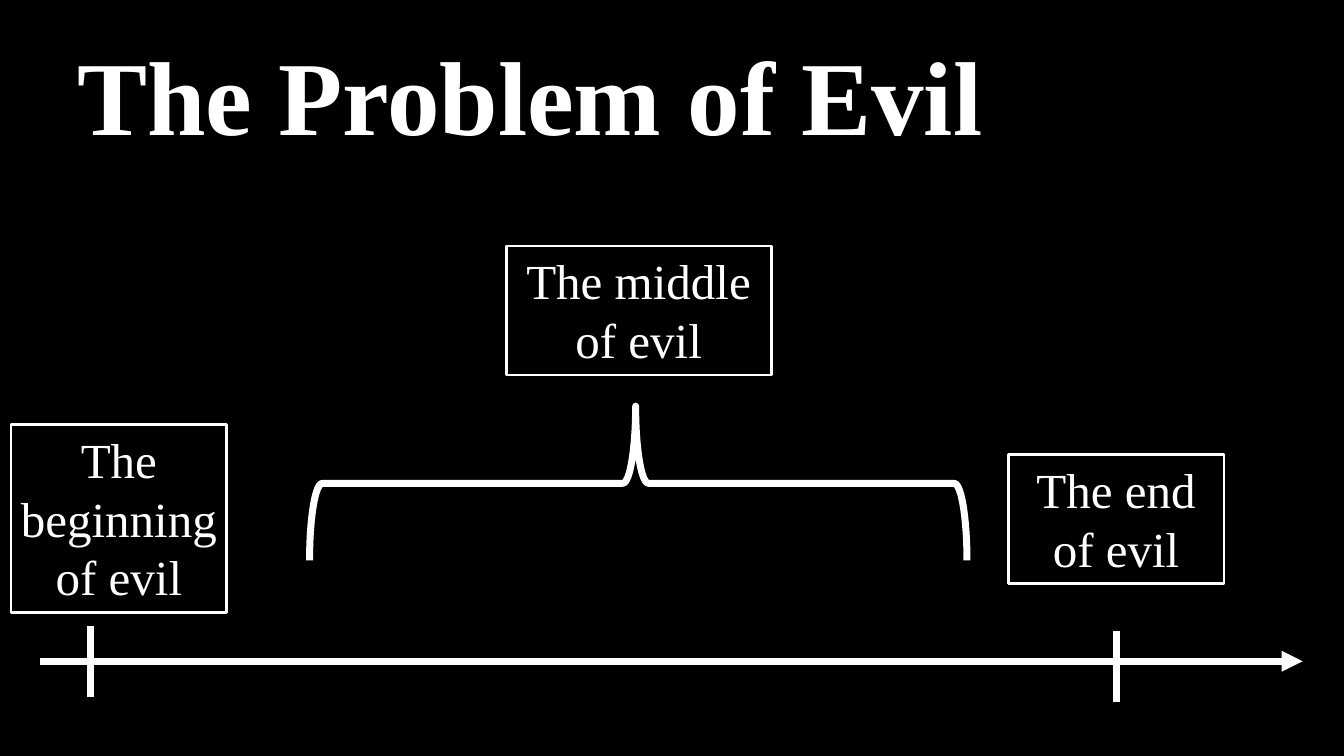
from dataclasses import dataclass

from lxml import etree
from pptx import Presentation
from pptx.dml.color import RGBColor
from pptx.enum.shapes import MSO_CONNECTOR as CONN, MSO_SHAPE as SHAPE
from pptx.enum.text import MSO_ANCHOR as ANCHOR, PP_ALIGN as ALIGN
from pptx.oxml.ns import qn
from pptx.util import Inches, Pt


@dataclass(frozen=True)
class Theme:
    ink: RGBColor = RGBColor(0xFF, 0xFF, 0xFF)
    ground: RGBColor = RGBColor(0, 0, 0)
    font: str = "Times New Roman"
    title_size: int = 75
    label_size: int = 35
    label_inset: float = 0.05
    border: int = 2
    stroke: int = 5


THEME = Theme()


def write(tf, text, size, bold=False):
    tf.word_wrap = True
    tf.text = text
    font = tf.paragraphs[0].runs[0].font
    font.name, font.size, font.bold = THEME.font, Pt(size), bold
    font.color.rgb = THEME.ink


def add_title(slide, text, x, y, w, h):
    sp = slide.shapes.add_textbox(Inches(x), Inches(y), Inches(w), Inches(h))
    write(sp.text_frame, text, THEME.title_size, bold=True)
    sp.text_frame.vertical_anchor = ANCHOR.MIDDLE


def add_label(slide, text, x, y, w, h):
    sp = slide.shapes.add_shape(SHAPE.RECTANGLE, Inches(x), Inches(y), Inches(w), Inches(h))
    sp.shadow.inherit = False
    sp.fill.solid()
    sp.fill.fore_color.rgb = THEME.ground
    sp.line.color.rgb = THEME.ink
    sp.line.width = Pt(THEME.border)
    tf = sp.text_frame
    write(tf, text, THEME.label_size)
    tf.margin_left = tf.margin_right = Inches(THEME.label_inset)
    tf.vertical_anchor = ANCHOR.TOP
    tf.paragraphs[0].alignment = ALIGN.CENTER


def add_line(slide, x1, y1, x2, y2, arrow=False):
    line = slide.shapes.add_connector(CONN.STRAIGHT, Inches(x1), Inches(y1), Inches(x2), Inches(y2))
    line.line.color.rgb = THEME.ink
    line.line.width = Pt(THEME.stroke)
    props = line._element.spPr
    etree.SubElement(props, qn("a:effectLst"))
    if arrow:
        etree.SubElement(props.find(qn("a:ln")), qn("a:tailEnd"), type="triangle")


def add_timeline(slide, x, y, w, ticks, tick_height):
    """Draw the time arrow; ticks are (offset along the arrow, rise above it)."""
    add_line(slide, x, y, x + w, y, arrow=True)
    for offset, rise in ticks:
        top = y - rise
        add_line(slide, x + offset, top, x + offset, top + tick_height)


def add_brace(slide, x, y, w, h):
    """Turn a left brace to point upwards within the given box."""
    left, top = x + (w - h) / 2, y + (h - w) / 2
    sp = slide.shapes.add_shape(SHAPE.LEFT_BRACE, Inches(left), Inches(top), Inches(h), Inches(w))
    sp.rotation = 90
    sp.adjustments[0], sp.adjustments[1] = 0.083, 0.504
    sp.shadow.inherit = False
    sp.fill.background()
    sp.line.color.rgb = THEME.ink
    sp.line.width = Pt(THEME.stroke)


def build_timeline_slide(prs):
    slide = prs.slides.add_slide(prs.slide_layouts[6])
    slide.background.fill.solid()
    slide.background.fill.fore_color.rgb = THEME.ground

    # Title
    add_title(slide, "The Problem of Evil", 0.67, 0.3, 12, 1.25)

    # Time arrow with its start and end marks
    add_timeline(slide, 0.4, 6.56, 12.52, [(0.5, 0.35), (10.67, 0.3)], 0.7)

    # Stages of evil
    add_label(slide, "The beginning of evil", 0.11, 4.21, 2.14, 1.87)
    add_label(slide, "The end of evil", 10, 4.51, 2.14, 1.28)
    add_brace(slide, 3.07, 4.03, 6.52, 1.53)
    add_label(slide, "The middle of evil", 5.02, 2.44, 2.63, 1.28)


def main():
    prs = Presentation()
    prs.slide_width, prs.slide_height = Inches(13.33), Inches(7.5)
    build_timeline_slide(prs)
    prs.save("out.pptx")


if __name__ == "__main__":
    main()
